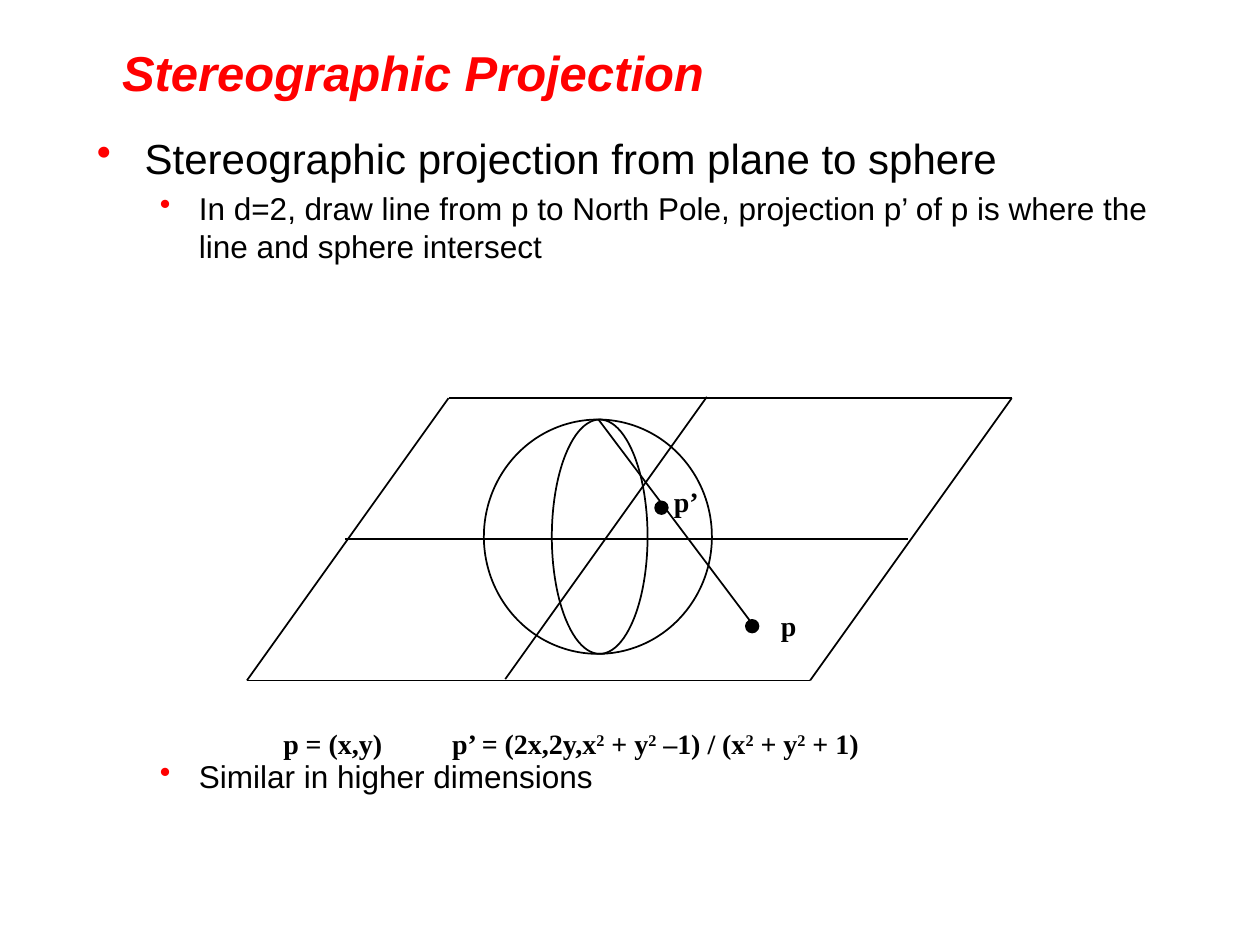
from lxml.etree import SubElement
from pptx import Presentation
from pptx.dml.color import RGBColor
from pptx.enum.shapes import MSO_CONNECTOR, MSO_SHAPE
from pptx.enum.text import MSO_ANCHOR, MSO_AUTO_SIZE
from pptx.oxml.ns import qn
from pptx.util import Inches, Pt

RED = RGBColor(255, 0, 0)
BLACK = RGBColor(0, 0, 0)
WHITE = RGBColor(255, 255, 255)

TITLE = dict(name="Arial", size=Pt(28), bold=True, italic=True)
TOPIC = dict(name="Arial", size=Pt(24))
DETAIL = dict(name="Arial", size=Pt(18))
MATH = dict(name="Times New Roman", size=Pt(16), bold=True)

BULLETS = [
    ("Stereographic projection from plane to sphere", 0, 0.38, 0.38, 4.8, TOPIC),
    ("In d=2, draw line from p to North Pole, projection p’ of p is where the "
     "line and sphere intersect", 1, 0.81, 0.31, 3.6, DETAIL),
    ("Similar in higher dimensions", 1, 0.81, 0.31, 281.5, DETAIL),
]
FORMULA = ["p = (x,y)\tp’ = (2x,2y,x", "2", " + y", "2", " –1) / (x", "2", " + y", "2", " + 1)"]
SPHERE = [(4.38, 3.33, 0.76, 1.86), (3.84, 3.33, 1.81, 1.86)]
POINTS = [(5.2, 3.98, 0.1, 0.1), (5.92, 4.92, 0.1, 0.1)]
NORTH_POLE, P = (4.75, 3.33), (5.97, 4.95)
PLANE_WIDTH = 4.47
PLANE_ROWS = [(2.74, 4.28), (1.96, 5.4), (3.56, 3.16)]
PLANE_COLUMNS = [(1.96, 5.4), (6.43, 5.4), (4.01, 5.39)]
COLUMN_RUN, COLUMN_RISE = 1.6, 2.24


def add_run(paragraph, text, style, color=BLACK):
    """Append a formatted run to a paragraph."""
    run = paragraph.add_run()
    run.text = text
    for attribute, value in style.items():
        setattr(run.font, attribute, value)
    run.font.color.rgb = color
    return run


def add_frame(slide, bounds, wrap=True):
    """Add a text box and return its text frame."""
    frame = slide.shapes.add_textbox(*map(Inches, bounds)).text_frame
    frame.word_wrap = wrap
    frame.auto_size = MSO_AUTO_SIZE.NONE if wrap else MSO_AUTO_SIZE.SHAPE_TO_FIT_TEXT
    return frame


def add_title(slide):
    """Add the slide heading."""
    frame = add_frame(slide, (0.87, 0.34, 7.48, 0.46))
    frame.vertical_anchor = MSO_ANCHOR.MIDDLE
    add_run(frame.paragraphs[0], "Stereographic Projection", TITLE, RED)


def add_bullets(slide):
    """Add the bulleted statements around the diagram."""
    frame = add_frame(slide, (0.67, 1, 8.75, 5.79))
    for index, (text, level, margin, hang, gap, style) in enumerate(BULLETS):
        paragraph = frame.add_paragraph() if index else frame.paragraphs[0]
        paragraph.level = level
        paragraph.space_before = Pt(gap)
        properties = paragraph._p.get_or_add_pPr()
        properties.set("marL", str(Inches(margin)))
        properties.set("indent", str(-Inches(hang)))
        bullet_color = SubElement(properties, qn("a:buClr"))
        SubElement(bullet_color, qn("a:srgbClr"), val=str(RED))
        SubElement(properties, qn("a:buChar"), char="•")
        add_run(paragraph, text, style)


def add_ellipse(slide, bounds, filled=False):
    """Add an outlined or solid black ellipse."""
    ellipse = slide.shapes.add_shape(MSO_SHAPE.OVAL, *map(Inches, bounds))
    ellipse.shadow.inherit = False
    ellipse.line.color.rgb = BLACK
    ellipse.line.width = Pt(1)
    if filled:
        ellipse.fill.solid()
        ellipse.fill.fore_color.rgb = BLACK
    else:
        ellipse.fill.background()


def add_line(slide, start, end):
    """Add a thin straight black line."""
    line = slide.shapes.add_connector(MSO_CONNECTOR.STRAIGHT, *map(Inches, (*start, *end)))
    line.line.color.rgb = BLACK
    line.line.width = Pt(1)
    SubElement(line._element.spPr, qn("a:effectLst"))


def add_label(slide, text, bounds):
    """Add the name of a point."""
    frame = add_frame(slide, bounds, wrap=False)
    add_run(frame.paragraphs[0], text, MATH)


def add_formula(slide):
    """Add the projection formula with raised exponents."""
    paragraph = add_frame(slide, (2.15, 5.72, 5.26, 0.37)).paragraphs[0]
    tabs = SubElement(paragraph._p.get_or_add_pPr(), qn("a:tabLst"))
    SubElement(tabs, qn("a:tab"), pos=str(Inches(1.34)), algn="l")
    for index, text in enumerate(FORMULA):
        run = add_run(paragraph, text, MATH)
        if index % 2:
            run.font._element.set("baseline", "30000")


def add_plane(slide):
    """Add the slanted plane with its two axes."""
    for x, y in PLANE_ROWS:
        add_line(slide, (x, y), (x + PLANE_WIDTH, y))
    for x, y in PLANE_COLUMNS:
        add_line(slide, (x, y), (x + COLUMN_RUN, y - COLUMN_RISE))


def main():
    """Build and save the slide."""
    presentation = Presentation()
    presentation.slide_width = Inches(10)
    presentation.slide_height = Inches(7.5)
    slide = presentation.slides.add_slide(presentation.slide_layouts[6])
    slide.background.fill.solid()
    slide.background.fill.fore_color.rgb = WHITE
    add_title(slide)
    add_bullets(slide)
    for bounds in SPHERE:
        add_ellipse(slide, bounds)
    add_line(slide, NORTH_POLE, P)
    add_label(slide, "p", (6.1, 4.78, 0.34, 0.37))
    add_label(slide, "p’", (5.25, 3.8, 0.4, 0.37))
    for bounds in POINTS:
        add_ellipse(slide, bounds, filled=True)
    add_formula(slide)
    add_plane(slide)
    presentation.save("out.pptx")


if __name__ == "__main__":
    main()
